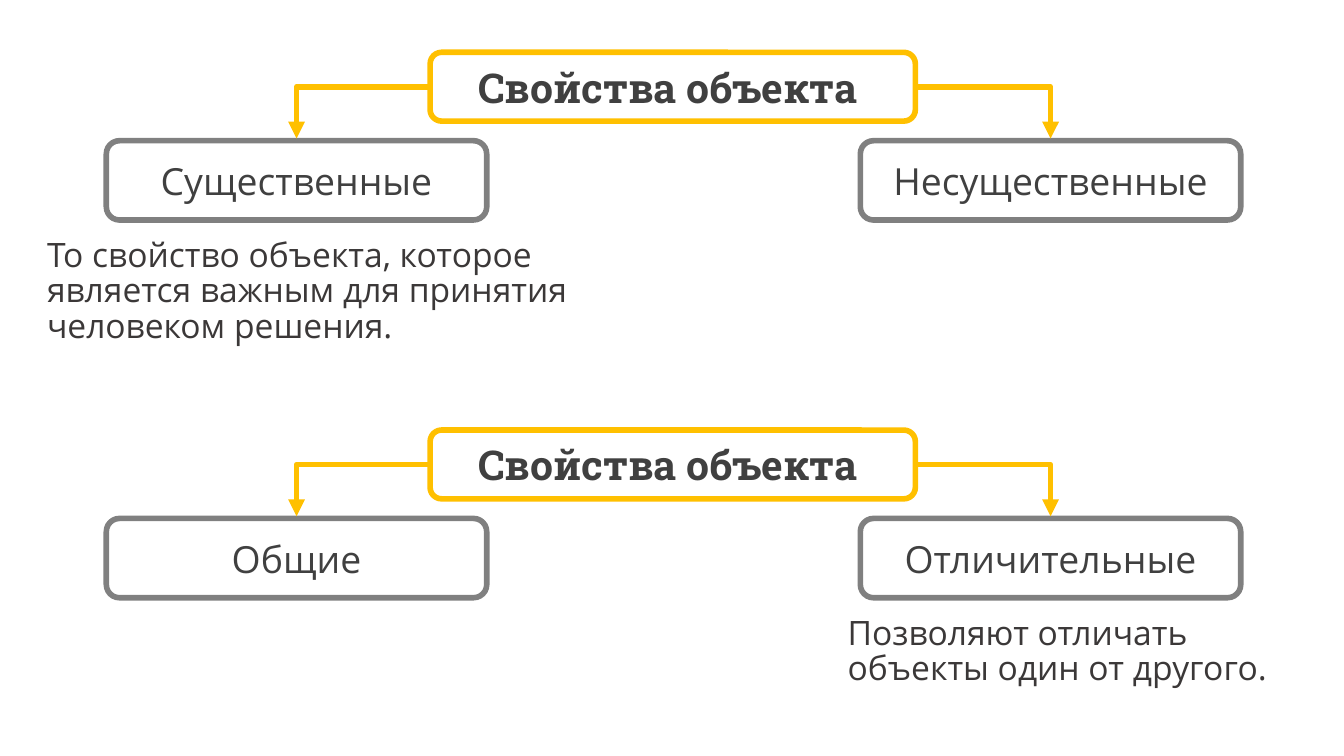
from dataclasses import dataclass

from lxml import etree
from pptx import Presentation
from pptx.dml.color import RGBColor
from pptx.enum.shapes import MSO_SHAPE
from pptx.enum.text import MSO_ANCHOR, PP_ALIGN
from pptx.oxml.ns import qn
from pptx.util import Cm, Pt

ROUNDED = MSO_SHAPE.ROUNDED_RECTANGLE
MIDDLE = MSO_ANCHOR.MIDDLE
CENTER = PP_ALIGN.CENTER


@dataclass(frozen=True)
class Theme:
    accent: RGBColor = RGBColor(0xFF, 0xC0, 0x00)
    border: RGBColor = RGBColor(0x80, 0x80, 0x80)
    label: RGBColor = RGBColor(0x40, 0x40, 0x40)
    body: RGBColor = RGBColor(0x3B, 0x38, 0x38)
    heading_font: str = "Roboto Slab"
    text_font: str = "Open Sans"
    heading_size: Pt = Pt(22)
    label_size: Pt = Pt(20)
    body_size: Pt = Pt(18)
    body_spacing: Pt = Pt(19)
    line_width: Pt = Pt(3)


class SlideBuilder:
    """Draws themed diagram elements on one slide."""

    def __init__(self, slide, theme):
        self.s = slide
        self.theme = theme

    def style_line(self, sp, color):
        sp.shadow.inherit = False
        sp.fill.background()
        sp.line.width = self.theme.line_width
        sp.line.color.rgb = color

    def style_font(self, p, name, size, color, bold=False):
        p.font.name = name
        p.font.size = size
        p.font.color.rgb = color
        p.font.bold = bold

    def box(self, text, left, top, width, height, heading=False):
        t = self.theme
        sp = self.s.shapes.add_shape(ROUNDED, Cm(left), Cm(top), Cm(width), Cm(height))
        self.style_line(sp, t.accent if heading else t.border)
        tf = sp.text_frame
        tf.word_wrap = True
        tf.vertical_anchor = MIDDLE
        tf.margin_left = tf.margin_right = Cm(0.4)
        tf.margin_top = tf.margin_bottom = Cm(0)
        p = tf.paragraphs[0]
        p.text = text
        p.alignment = CENTER
        if heading:
            self.style_font(p, t.heading_font, t.heading_size, t.label, bold=True)
        else:
            self.style_font(p, t.text_font, t.label_size, t.label)

    def note(self, lines, left, top, width, height):
        t = self.theme
        tf = self.s.shapes.add_textbox(Cm(left), Cm(top), Cm(width), Cm(height)).text_frame
        tf.word_wrap = True
        tf.text = "\n".join(lines)
        for p in tf.paragraphs:
            p.line_spacing = t.body_spacing
            self.style_font(p, t.text_font, t.body_size, t.body)

    def elbow_arrow(self, x1, y1, x2, y2):
        outline = self.s.shapes.build_freeform(Cm(x1), Cm(y1))
        outline.add_line_segments([(Cm(x2), Cm(y1)), (Cm(x2), Cm(y2))], close=False)
        sp = outline.convert_to_shape()
        self.style_line(sp, self.theme.accent)
        ln = sp.element.spPr.find(qn("a:ln"))
        etree.SubElement(ln, qn("a:tailEnd"), type="triangle")

    def branch(self, top, heading, kinds):
        head_left, head_width, head_height = 8.13, 9.17, 1.3
        kind_width, kind_height, kind_top = 7.19, 1.5, top + 1.67
        sides = ((2.01, head_left), (16.26, head_left + head_width))
        self.box(heading, head_left, top, head_width, head_height, heading=True)
        for kind, (left, start) in zip(kinds, sides):
            self.box(kind, left, kind_top, kind_width, kind_height)
            self.elbow_arrow(start, top + head_height / 2, left + kind_width / 2, kind_top - 0.04)


def main():
    prs = Presentation()
    prs.slide_width, prs.slide_height = Cm(25.4), Cm(14.29)
    slide = SlideBuilder(prs.slides.add_slide(prs.slide_layouts[6]), Theme())

    heading = "Свойства объекта "
    upper, lower, note_offset = 0.99, 8.13, 3.4
    slide.branch(upper, heading, ("Существенные", "Несущественные"))
    slide.branch(lower, heading, ("Общие", "Отличительные"))
    slide.note(
        ("То свойство объекта, которое", "является важным для принятия", "человеком решения."),
        0.64, upper + note_offset, 10.52, 2.29,
    )
    slide.note(
        ("Позволяют отличать", "объекты один от другого."),
        15.77, lower + note_offset, 8.64, 1.6,
    )
    prs.save("out.pptx")


if __name__ == "__main__":
    main()
